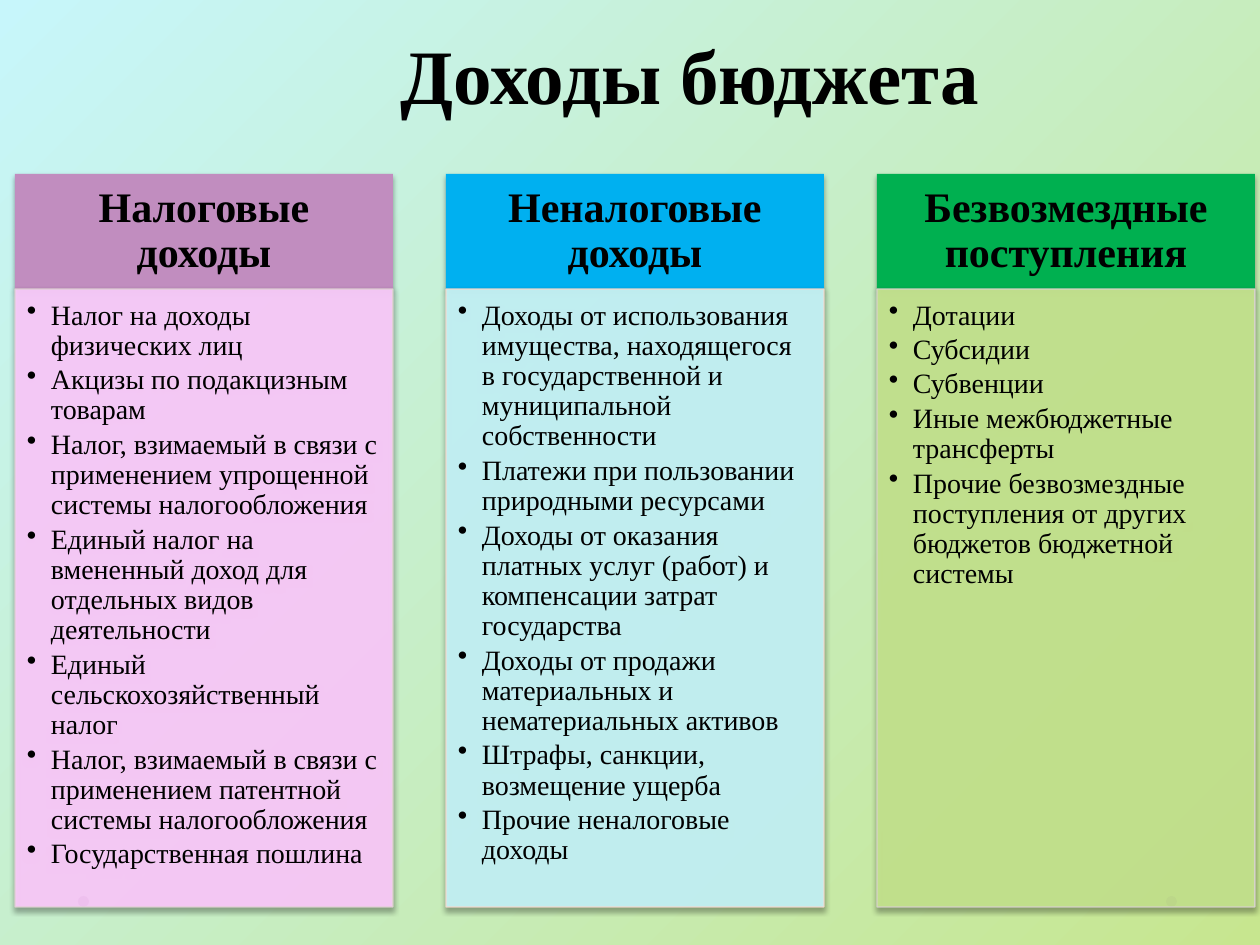
import pptx
import pptx.dml.color
import pptx.enum.shapes
import pptx.enum.text
import pptx.oxml
import pptx.oxml.ns
import pptx.util
from lxml import etree

RGBColor = pptx.dml.color.RGBColor
ALIGN = pptx.enum.text.PP_ALIGN
ANCHOR = pptx.enum.text.MSO_ANCHOR
SHAPE = pptx.enum.shapes.MSO_SHAPE
qn = pptx.oxml.ns.qn

PX = 914400 / 126
FONT = "Times New Roman"
BLACK = RGBColor(0, 0, 0)
GRAY = RGBColor(0x80, 0x80, 0x80)
AQUA = RGBColor(0xC7, 0xF6, 0xFB)
LIME = RGBColor(0xC7, 0xE6, 0x8F)
MAUVE = RGBColor(0xC1, 0x8D, 0xBF)
PINK = RGBColor(0xFF, 0xCC, 0xFF)
BLUE = RGBColor(0x00, 0xB0, 0xF0)
GREEN = RGBColor(0x00, 0xB0, 0x50)
ROSE_EDGE = RGBColor(0xDE, 0xD1, 0xD1)
PEACH_EDGE = RGBColor(0xF5, 0xD9, 0xCD)
SAND_EDGE = RGBColor(0xD9, 0xD3, 0xCF)

COLUMN_LEFT, COLUMN_TOP, COLUMN_PITCH = 15, 174, 431
COLUMN_WIDTH, COLUMN_HEIGHT, HEADING_HEIGHT = 378, 733, 115

INCOME_TYPES = [
    ("Налоговые доходы", MAUVE, PINK, ROSE_EDGE, [
        "Налог на доходы физических лиц",
        "Акцизы по подакцизным товарам",
        "Налог, взимаемый в связи с применением упрощенной системы налогообложения",
        "Единый налог на вмененный доход для отдельных видов деятельности",
        "Единый сельскохозяйственный налог",
        "Налог, взимаемый в связи с применением патентной системы налогообложения",
        "Государственная пошлина",
    ]),
    ("Неналоговые доходы", BLUE, AQUA, PEACH_EDGE, [
        "Доходы от использования имущества, находящегося в государственной и "
        "муниципальной собственности",
        "Платежи при пользовании природными ресурсами",
        "Доходы от оказания платных услуг (работ) и компенсации затрат государства",
        "Доходы от продажи материальных и нематериальных активов",
        "Штрафы, санкции, возмещение ущерба",
        "Прочие неналоговые доходы",
    ]),
    ("Безвозмездные поступления", GREEN, LIME, SAND_EDGE, [
        "Дотации",
        "Субсидии",
        "Субвенции",
        "Иные межбюджетные трансферты",
        "Прочие безвозмездные поступления от других бюджетов бюджетной системы",
    ]),
]


def px(length):
    return pptx.util.Emu(round(length * PX))


def add_run(paragraph, text, size, bold=False):
    run = paragraph.add_run()
    run.text = text
    run.font.name = FONT
    run.font.size = pptx.util.Pt(size)
    run.font.bold = bold
    run.font.color.rgb = BLACK


def set_frame(frame, anchor, insets):
    """Insets are left, top, right and bottom in px."""
    frame.word_wrap = True
    frame.auto_size = pptx.enum.text.MSO_AUTO_SIZE.NONE
    frame.vertical_anchor = anchor
    (frame.margin_left, frame.margin_top,
     frame.margin_right, frame.margin_bottom) = map(px, insets)


def add_filled(slide, kind, box, color):
    shape = slide.shapes.add_shape(kind, *map(px, box))
    shape.shadow.inherit = False
    shape.fill.solid()
    shape.fill.fore_color.rgb = color
    shape.line.fill.background()
    return shape


def add_soft_shadow(shape):
    effects = shape._element.spPr.find(qn("a:effectLst"))
    shadow = etree.SubElement(effects, qn("a:outerShdw"), blurRad="40000",
                              dist="23000", dir="5400000", rotWithShape="0")
    color = etree.SubElement(shadow, qn("a:srgbClr"), val=str(BLACK))
    etree.SubElement(color, qn("a:alpha"), val="35000")


def make_translucent(fill_parent):
    """Give the solid fill directly under this element 90% opacity."""
    color = fill_parent.find(qn("a:solidFill")).find(qn("a:srgbClr"))
    etree.SubElement(color, qn("a:alpha"), val="90000")


def add_bullet(paragraph):
    properties = paragraph._p.get_or_add_pPr()
    properties.set("marL", str(px(24)))
    properties.set("indent", str(-px(24)))
    etree.SubElement(properties, qn("a:buChar"), char="•")


def set_background(slide):
    fill = slide.background.fill
    fill.gradient()
    fill.gradient_angle = 315
    for stop, color, position in zip(fill.gradient_stops, (AQUA, LIME), (0, 1)):
        stop.color.rgb = color
        stop.position = position


def place_title(slide, box):
    title = slide.shapes.title
    title.left, title.top, title.width, title.height = map(px, box)
    set_frame(title.text_frame, ANCHOR.BOTTOM, (0, 0, 0, 0))
    paragraph = title.text_frame.paragraphs[0]
    paragraph.alignment = ALIGN.CENTER
    paragraph.line_spacing = pptx.util.Pt(58)
    add_run(paragraph, "Доходы бюджета", 44, bold=True)


def add_heading(slide, box, text, color):
    heading = add_filled(slide, SHAPE.RECTANGLE, box, color)
    add_soft_shadow(heading)
    set_frame(heading.text_frame, ANCHOR.MIDDLE, (24, 14, 24, 14))
    paragraph = heading.text_frame.paragraphs[0]
    paragraph.alignment = ALIGN.CENTER
    paragraph.line_spacing = 0.9
    add_run(paragraph, text, 24, bold=True)


def add_item_list(slide, box, items, color, edge):
    panel = add_filled(slide, SHAPE.RECTANGLE, box, color)
    panel.line.color.rgb = edge
    panel.line.width = pptx.util.Pt(0.75)
    properties = panel._element.spPr
    make_translucent(properties)
    make_translucent(properties.find(qn("a:ln")))
    add_soft_shadow(panel)
    frame = panel.text_frame
    set_frame(frame, ANCHOR.TOP, (12, 12, 15, 18))
    for index, item in enumerate(items):
        paragraph = frame.add_paragraph() if index else frame.paragraphs[0]
        paragraph.alignment = ALIGN.LEFT
        paragraph.line_spacing = 0.9
        paragraph.space_after = pptx.util.Pt(2.4)
        add_bullet(paragraph)
        add_run(paragraph, item, 16)


def add_income_column(slide, box, heading, heading_color, color, edge, items):
    left, top, width, height = box
    add_heading(slide, (left, top, width, HEADING_HEIGHT), heading, heading_color)
    list_box = (left, top + HEADING_HEIGHT, width, height - HEADING_HEIGHT)
    add_item_list(slide, list_box, items, color, edge)


def main():
    deck = pptx.Presentation()
    deck.slide_width, deck.slide_height = px(1260), px(945)
    slide = deck.slides.add_slide(deck.slide_layouts[5])
    set_background(slide)
    place_title(slide, (123, 38, 1134, 82))
    for dot_left in (1166, 78):
        add_filled(slide, SHAPE.OVAL, (dot_left, 896, 11, 11), GRAY)
    for index, income_type in enumerate(INCOME_TYPES):
        left = COLUMN_LEFT + index * COLUMN_PITCH
        add_income_column(slide, (left, COLUMN_TOP, COLUMN_WIDTH, COLUMN_HEIGHT),
                          *income_type)
    deck.save("out.pptx")


if __name__ == "__main__":
    main()
